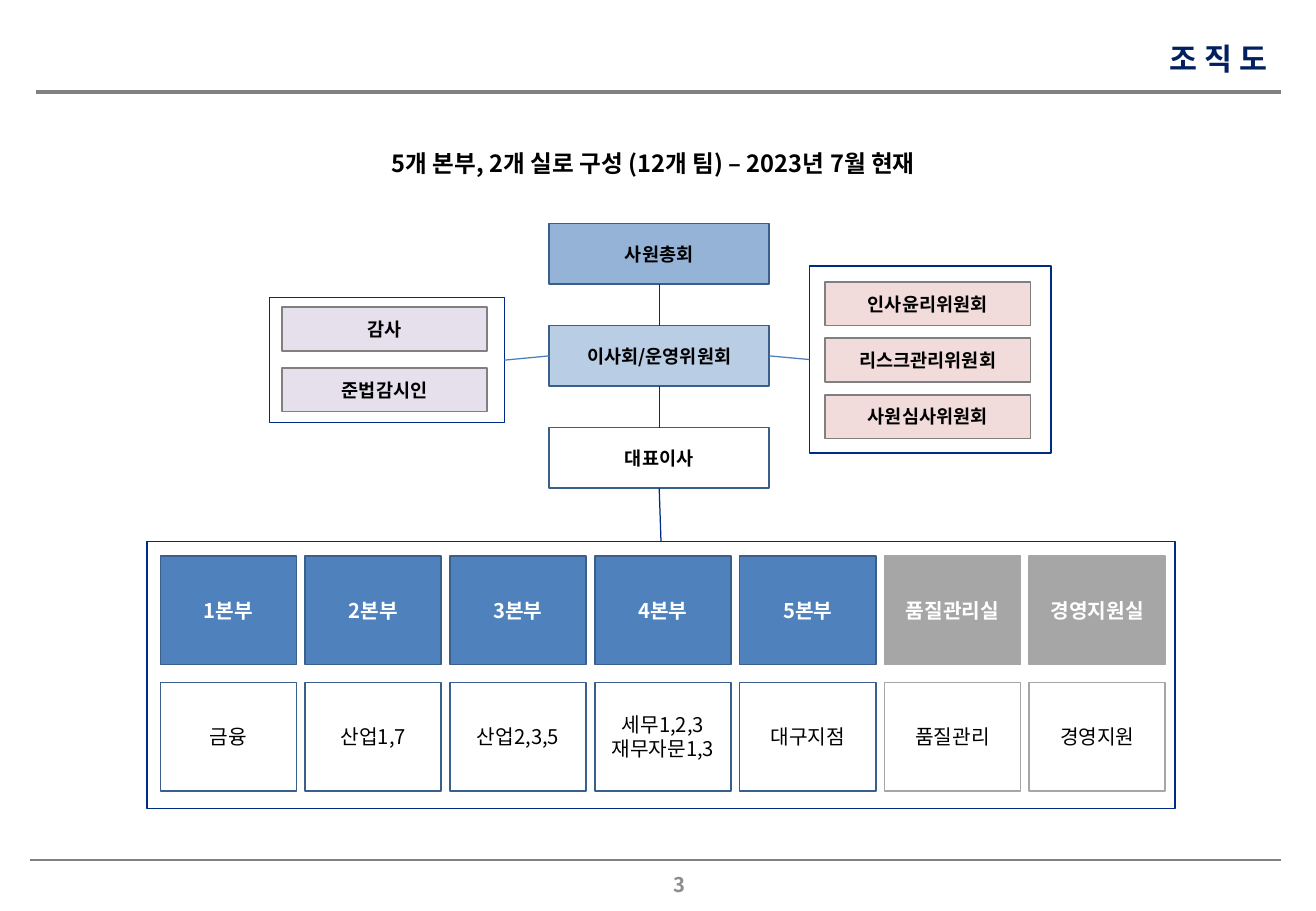
from dataclasses import dataclass

from lxml import etree
from pptx import Presentation
from pptx.dml.color import RGBColor
from pptx.enum.shapes import MSO_CONNECTOR, MSO_SHAPE
from pptx.enum.text import MSO_ANCHOR, PP_ALIGN
from pptx.oxml.ns import qn
from pptx.util import Inches, Pt

RECTANGLE = MSO_SHAPE.RECTANGLE
STRAIGHT = MSO_CONNECTOR.STRAIGHT
TOP, MIDDLE = MSO_ANCHOR.TOP, MSO_ANCHOR.MIDDLE
CENTER, RIGHT = PP_ALIGN.CENTER, PP_ALIGN.RIGHT
SIDE_TOP, SIDE_LEFT, SIDE_BOTTOM, SIDE_RIGHT = range(4)


@dataclass(frozen=True)
class Theme:
    font: str = "Noto Sans CJK KR"
    title_font: str = "Arial"
    title_size: int = 18
    subtitle_size: int = 14
    unit_size: int = 12
    body_size: int = 11
    ink: str = "000000"
    white: str = "FFFFFF"
    navy: str = "002060"
    frame: str = "002B82"
    branch: str = "4B7EBC"
    edge: str = "3A5F8C"
    rule: str = "808080"
    page: str = "8C8C8C"
    partners: str = "95B3D7"
    board: str = "B9CDE5"
    audit: str = "E6E0EC"
    committee: str = "F2DCDB"
    division: str = "4F81BD"
    office: str = "A6A6A6"


THEME = Theme()


@dataclass(frozen=True)
class Grid:
    """Equal cells spread evenly over an area, in inches."""
    left: float
    top: float
    width: float
    height: float
    cols: int
    rows: int
    cell_width: float
    cell_height: float

    def cell(self, col, row):
        col_step = (self.width - self.cell_width) / max(self.cols - 1, 1)
        row_step = (self.height - self.cell_height) / max(self.rows - 1, 1)
        return (self.left + col * col_step, self.top + row * row_step,
                self.cell_width, self.cell_height)


LEADERS = Grid(4.52, 1.84, 1.81, 2.18, 1, 3, 1.81, 0.5)
AUDITORS = Grid(2.32, 2.53, 1.69, 0.86, 1, 2, 1.69, 0.36)
COMMITTEES = Grid(6.79, 2.32, 1.69, 1.29, 1, 3, 1.69, 0.36)
UNITS = Grid(1.32, 4.58, 8.27, 1.93, 7, 2, 1.12, 0.89)

AUDIT_FRAME = (2.22, 2.45, 1.93, 1.03)
COMMITTEE_FRAME = (6.66, 2.19, 1.99, 1.54)
UNIT_FRAME = (1.21, 4.46, 8.46, 2.2)

LEADER_ROLES = [("사원총회", THEME.partners), ("이사회/운영위원회", THEME.board),
                ("대표이사", THEME.white)]
AUDIT_ROLES = ["감사", "준법감시인"]
COMMITTEE_NAMES = ["인사윤리위원회", "리스크관리위원회", "사원심사위원회"]
DIVISION_TEAMS = [("1본부", ["금융"]), ("2본부", ["산업1,7"]), ("3본부", ["산업2,3,5"]),
                  ("4본부", ["세무1,2,3", "재무자문1,3"]), ("5본부", ["대구지점"])]
OFFICE_TEAMS = [("품질관리실", ["품질관리"]), ("경영지원실", ["경영지원"])]


def rgb(color):
    return RGBColor.from_string(color)


def write(frame, lines, size, color, bold=True, align=CENTER, anchor=MIDDLE,
          font=THEME.font, spacing=1.0):
    frame.word_wrap = True
    frame.vertical_anchor = anchor
    for index, line in enumerate(lines):
        paragraph = frame.add_paragraph() if index else frame.paragraphs[0]
        paragraph.alignment = align
        paragraph.line_spacing = spacing
        run = paragraph.add_run()
        run.text = line
        for name, value in {"size": Pt(size), "bold": bold, "name": font}.items():
            setattr(run.font, name, value)
        run.font.color.rgb = rgb(color)
        east_asian = etree.Element(qn("a:ea"), typeface=THEME.font)
        run.font._element.find(qn("a:latin")).addnext(east_asian)


def add_text(slide, place, text, **style):
    box = slide.shapes.add_textbox(*map(Inches, place))
    write(box.text_frame, [text], **style)


def add_box(slide, place, edge, fill=None, edge_width=1):
    box = slide.shapes.add_shape(RECTANGLE, *map(Inches, place))
    box.shadow.inherit = False
    if fill:
        box.fill.solid()
        box.fill.fore_color.rgb = rgb(fill)
    else:
        box.fill.background()
    box.line.color.rgb = rgb(edge)
    box.line.width = Pt(edge_width)
    return box


def add_label(slide, place, lines, edge, fill=None, size=THEME.body_size,
              color=THEME.ink, bold=True):
    box = add_box(slide, place, edge, fill)
    write(box.text_frame, lines, size, color, bold)
    return box


def add_line(slide, start, end, color, width):
    line = slide.shapes.add_connector(STRAIGHT, *map(Inches, start + end))
    etree.SubElement(line._element.spPr, qn("a:effectLst"))
    line.line.color.rgb = rgb(color)
    line.line.width = Pt(width)
    return line


def join(slide, source, source_side, target, target_side, color):
    link = add_line(slide, (0, 0), (0, 0), color, 0.75)
    link.begin_connect(source, source_side)
    link.end_connect(target, target_side)


def add_stack(slide, grid, names, fill):
    for row, name in enumerate(names):
        add_label(slide, grid.cell(0, row), [name], THEME.rule, fill)


def add_unit(slide, col, name, teams, fill, edge):
    add_label(slide, UNITS.cell(col, 0), [name], edge, fill, THEME.unit_size, THEME.white)
    add_label(slide, UNITS.cell(col, 1), teams, edge, size=THEME.unit_size, bold=False)


def add_page_furniture(slide):
    add_line(slide, (0.3, 0.76), (10.54, 0.76), THEME.rule, 2.25)
    add_line(slide, (0.25, 7.08), (10.54, 7.08), THEME.rule, 1.5)
    add_text(slide, (3.88, 7.08, 3.43, 0.4), "3", size=THEME.unit_size, color=THEME.page)
    add_text(slide, (7.62, 0.28, 2.91, 0.4), "조 직 도", size=THEME.title_size,
             color=THEME.navy, align=RIGHT, anchor=TOP, font=THEME.title_font)
    add_text(slide, (0.53, 1.06, 9.69, 0.41),
             "5개 본부, 2개 실로 구성 (12개 팀) – 2023년 7월 현재",
             size=THEME.subtitle_size, color=THEME.ink, anchor=TOP, spacing=1.5)


def add_organisation(slide):
    audit_frame, committee_frame, unit_frame = [
        add_box(slide, place, THEME.frame, edge_width=0.75)
        for place in (AUDIT_FRAME, COMMITTEE_FRAME, UNIT_FRAME)]
    leaders = [add_label(slide, LEADERS.cell(0, row), [role], THEME.edge, fill)
               for row, (role, fill) in enumerate(LEADER_ROLES)]
    add_stack(slide, AUDITORS, AUDIT_ROLES, THEME.audit)
    add_stack(slide, COMMITTEES, COMMITTEE_NAMES, THEME.committee)
    for col, (name, teams) in enumerate(DIVISION_TEAMS):
        add_unit(slide, col, name, teams, THEME.division, THEME.edge)
    for col, (name, teams) in enumerate(OFFICE_TEAMS, len(DIVISION_TEAMS)):
        add_unit(slide, col, name, teams, THEME.office, THEME.office)

    for upper, lower in zip(leaders, leaders[1:] + [unit_frame]):
        join(slide, upper, SIDE_BOTTOM, lower, SIDE_TOP, THEME.frame)
    board = leaders[1]
    join(slide, audit_frame, SIDE_RIGHT, board, SIDE_LEFT, THEME.branch)
    join(slide, board, SIDE_RIGHT, committee_frame, SIDE_LEFT, THEME.branch)


def main():
    presentation = Presentation()
    presentation.slide_width = Inches(10.83)
    presentation.slide_height = Inches(7.5)
    slide = presentation.slides.add_slide(presentation.slide_layouts[6])
    add_page_furniture(slide)
    add_organisation(slide)
    presentation.save("out.pptx")


if __name__ == "__main__":
    main()
